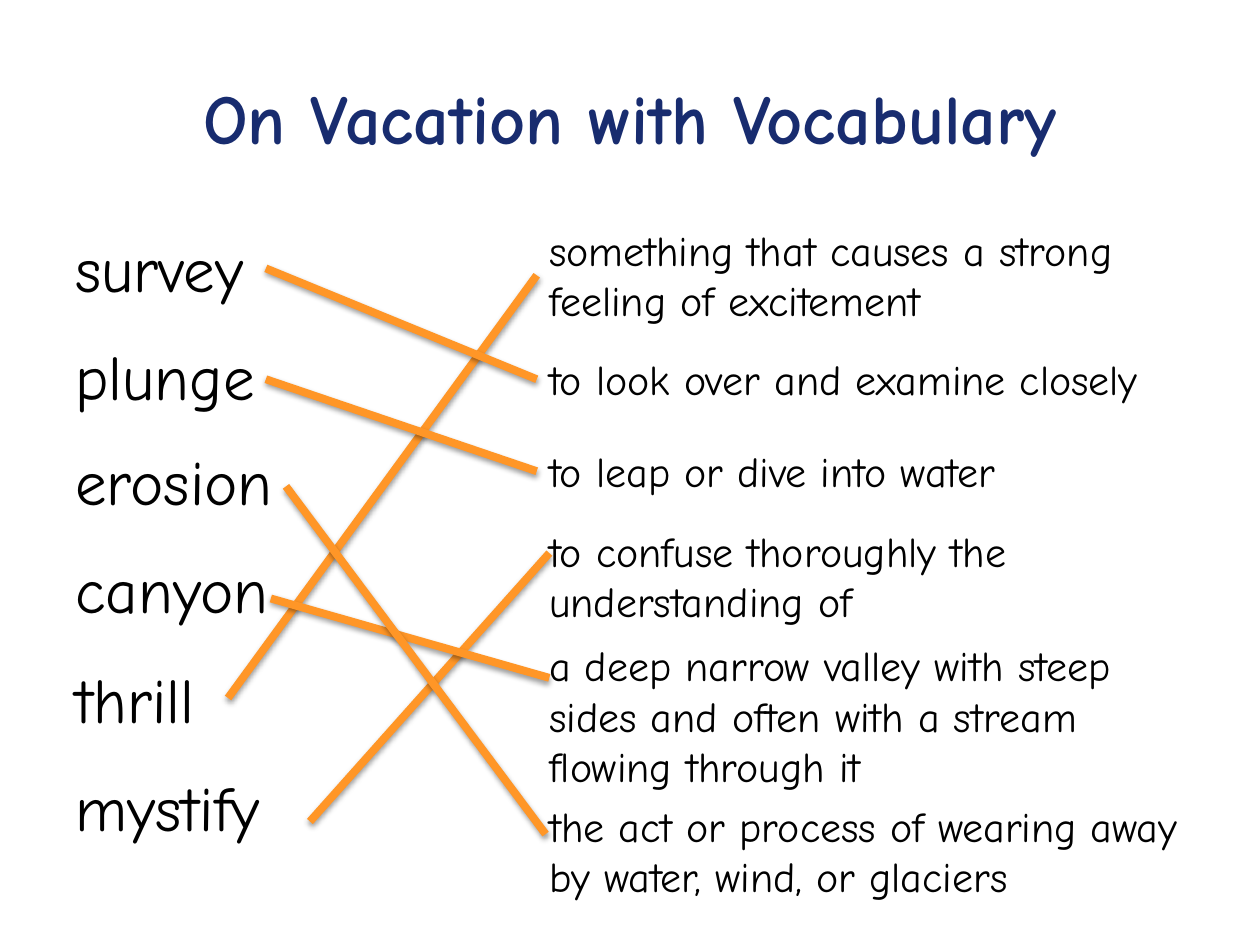
from lxml.etree import SubElement
from pptx import Presentation
from pptx.dml.color import RGBColor
from pptx.enum.shapes import MSO_CONNECTOR as CONN
from pptx.enum.text import MSO_ANCHOR as ANCHOR, MSO_AUTO_SIZE as FIT, PP_ALIGN as ALIGN
from pptx.oxml.ns import qn
from pptx.util import Inches, Pt


def rgb(value):
    return RGBColor.from_string(value)


class Worksheet:
    font = "Comic Neue"
    ink = "000000"
    navy = "182C6F"
    orange = "FF9627"

    def __init__(self, prs):
        self.slide = prs.slides.add_slide(prs.slide_layouts[6])

    def text(self, words, left, top, width, height, size, color=ink):
        sp = self.slide.shapes.add_textbox(*map(Inches, (left, top, width, height)))
        tf = sp.text_frame
        tf.word_wrap = True
        tf.auto_size = FIT.SHAPE_TO_FIT_TEXT
        p = tf.paragraphs[0]
        p.text = words
        p.font.name = self.font
        p.font.size = Pt(size)
        p.font.color.rgb = rgb(color)
        return sp

    def title(self, words):
        sp = self.text(words, 0.5, 0.3, 9, 1.25, 40, self.navy)
        tf = sp.text_frame
        tf.auto_size = FIT.NONE
        tf.vertical_anchor = ANCHOR.MIDDLE
        p = tf.paragraphs[0]
        p.alignment = ALIGN.CENTER
        p.font.bold = True

    def word(self, word, top):
        self.text(word, 0.5, top, 2.22, 0.71, 36)

    def definition(self, words, top, height):
        return self.text(words, 4.26, top, 5.43, height, 24)

    def match(self, start, end, box=None):
        line = self.slide.shapes.add_connector(CONN.STRAIGHT, *map(Inches, start + end))
        if box is not None:
            line.begin_connect(box, 1)
        line.line.color.rgb = rgb(self.orange)
        line.line.width = Pt(4.5)
        effects = SubElement(line._element.spPr, qn("a:effectLst"))
        shadow = SubElement(effects, qn("a:outerShdw"), blurRad="40000",
                            dist="20000", dir="5400000", rotWithShape="0")
        black = SubElement(shadow, qn("a:srgbClr"), val=self.ink)
        SubElement(black, qn("a:alpha"), val="38000")


WORDS = [("survey", 1.77), ("plunge", 2.63), ("erosion", 3.46),
         ("canyon", 4.32), ("thrill", 5.19), ("mystify", 6.05)]

DEFINITIONS = [
    ("something that causes a strong feeling of excitement", 1.73, 0.91),
    ("to look over and examine closely", 2.76, 0.5),
    ("to leap or dive into water", 3.49, 0.5),
    ("to confuse thoroughly the understanding of", 4.12, 0.91),
    ("a deep narrow valley with steep sides and often with a stream "
     "flowing through it", 5.03, 1.31),
    ("the act or process of wearing away by water, wind, or glaciers", 6.3, 0.91),
]

MATCHES = [
    ((4.26, 2.18), (1.81, 5.54), True),
    ((4.26, 3.01), (2.11, 2.13), True),
    ((4.26, 3.74), (2.11, 3.01), True),
    ((4.36, 4.39), (2.46, 6.52), False),
    ((4.36, 5.38), (2.15, 4.75), False),
    ((4.33, 6.62), (2.27, 3.86), False),
]


def main():
    prs = Presentation()
    prs.slide_width, prs.slide_height = Inches(10), Inches(7.5)
    sheet = Worksheet(prs)
    for word, top in WORDS:
        sheet.word(word, top)
    boxes = [sheet.definition(*definition) for definition in DEFINITIONS]
    for box, (start, end, joined) in zip(boxes, MATCHES):
        sheet.match(start, end, box if joined else None)
    sheet.title("On Vacation with Vocabulary")
    prs.save("out.pptx")


if __name__ == "__main__":
    main()
